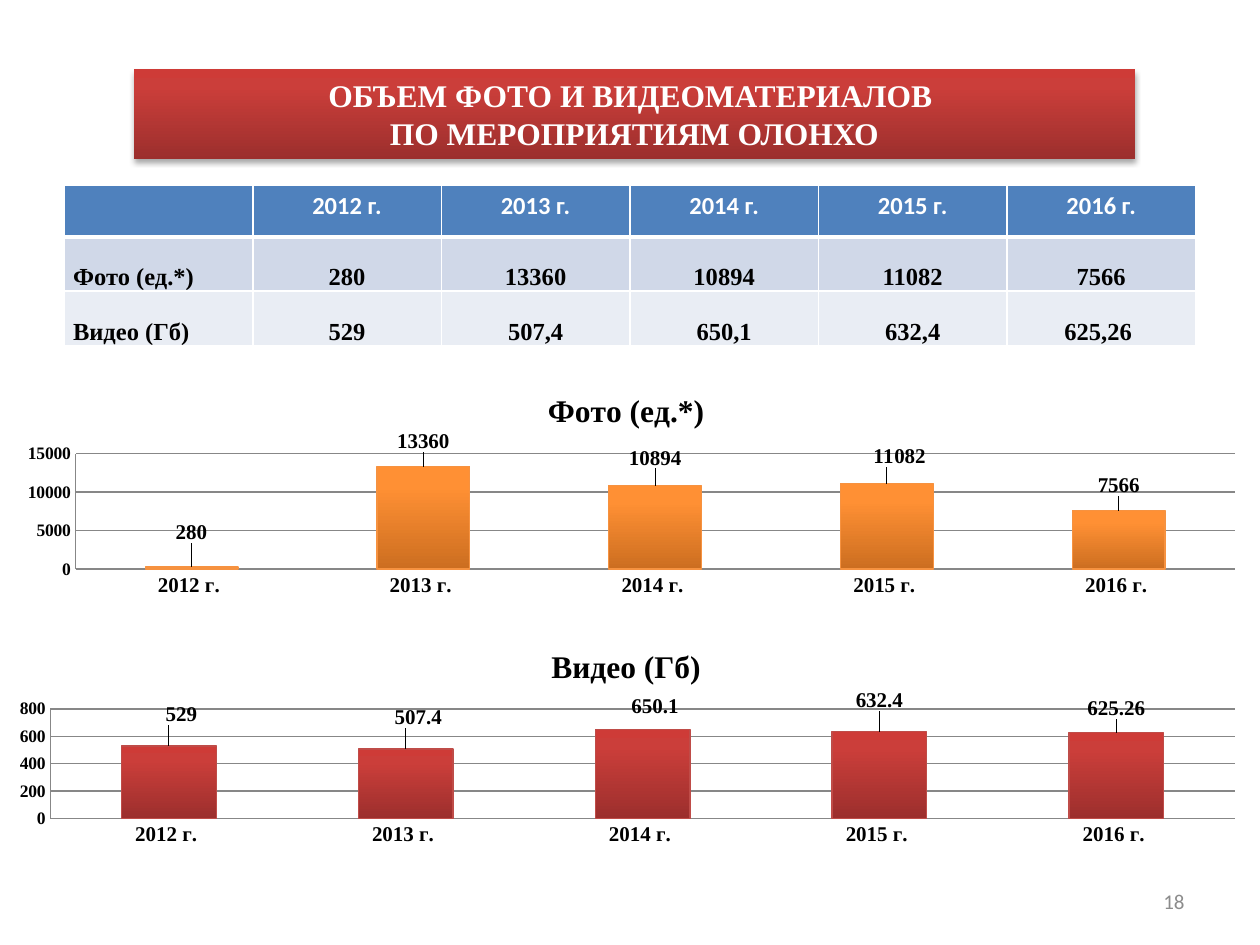
from copy import deepcopy
from dataclasses import dataclass

from lxml.etree import SubElement
from pptx import Presentation
from pptx.chart.data import CategoryChartData
from pptx.dml.color import RGBColor
from pptx.enum.chart import XL_CHART_TYPE, XL_LABEL_POSITION, XL_TICK_MARK
from pptx.enum.shapes import MSO_SHAPE
from pptx.enum.text import MSO_ANCHOR, PP_ALIGN
from pptx.oxml import parse_xml
from pptx.oxml.ns import nsdecls, qn
from pptx.util import Inches, Pt

SERIF, SANS = "Times New Roman", "Calibri"
WHITE, BLACK, GREY = "FFFFFF", "000000", "878787"
RED_STOPS = ("9C2F2D", "CB3E3A", "CE3B37")
ORANGE_STOPS = ("CC6E20", "FF9034", "FF9136")
YEARS = [f"{year} г." for year in range(2012, 2017)]
TABLE_ROWS = [
    ["", *YEARS],
    ["Фото (ед.*)", "280", "13360", "10894", "11082", "7566"],
    ["Видео (Гб)", "529", "507,4", "650,1", "632,4", "625,26 "],
]
ROW_FILLS = ("4F81BD", "D0D8E8", "E9EDF4")


@dataclass
class VolumeChart:
    """One yearly column chart with its plot area and label shifts."""

    title: str
    values: list[float]
    top: float
    height: float
    maximum: int
    step: int
    stops: tuple[str, str, str]
    outline: str
    plot: tuple[float, float, float, float]
    label_shifts: list[tuple[float, float]]


CHARTS = [
    VolumeChart("Фото (ед.*) ", [280, 13360, 10894, 11082, 7566], 2.97, 1.8, 15000, 5000,
                ORANGE_STOPS, "F69240", (0.06, 0.35, 0.92, 0.51),
                [(0, -0.08), (0, -0.04), (0, -0.05), (0.01, -0.05), (0, -0.04)]),
    VolumeChart("Видео (Гб) ", [529, 507.4, 650.1, 632.4, 625.26], 5, 1.74, 800, 200,
                RED_STOPS, "BF4C48", (0.04, 0.36, 0.94, 0.5),
                [(0.01, -0.07), (0.01, -0.07), (0.01, -0.03), (0, -0.07), (0, -0.04)]),
]


def rgb(color: str) -> RGBColor:
    """Turn a hex string into a colour."""
    return RGBColor.from_string(color)


def style_font(font, *, size, color=BLACK, name=SERIF, bold=True) -> None:
    """Set the face, size, weight and colour of a font."""
    font.name, font.size, font.bold = name, Pt(size), bold
    font.color.rgb = rgb(color)


def write(paragraph, text, *, align=PP_ALIGN.CENTER, **font_format) -> None:
    """Put one formatted run in a paragraph."""
    paragraph.alignment = align
    run = paragraph.add_run()
    run.text = text
    style_font(run.font, **font_format)


def fill_gradient(fill, element, colors) -> None:
    """Fill upwards with three colour stops."""
    fill.gradient()
    fill.gradient_angle = 90
    stop_list = element.find(f".//{qn('a:gsLst')}")
    stop_list.append(deepcopy(stop_list[-1]))
    for stop, color, position in zip(fill.gradient_stops, colors, (0, 0.8, 1)):
        stop.color.rgb = rgb(color)
        stop.position = position


def add_heading(slide) -> None:
    """Draw the red banner with the slide heading."""
    banner = slide.shapes.add_shape(MSO_SHAPE.RECTANGLE, Inches(1.06), Inches(0.55),
                                    Inches(7.95), Inches(0.71))
    fill_gradient(banner.fill, banner.element, RED_STOPS)
    banner.line.fill.background()
    banner.shadow.inherit = False
    effects = banner.element.spPr.find(qn("a:effectLst"))
    effects.append(parse_xml(
        f'<a:outerShdw {nsdecls("a")} blurRad="{Pt(3.1)}" dist="{Pt(1.8)}" dir="5400000" '
        'rotWithShape="0"><a:srgbClr val="000000"><a:alpha val="35000"/></a:srgbClr></a:outerShdw>'))
    frame = banner.text_frame
    frame.word_wrap = True
    write(frame.paragraphs[0], "ОБЪЕМ ФОТО И ВИДЕОМАТЕРИАЛОВ ", size=18, color=WHITE)
    write(frame.add_paragraph(), "ПО МЕРОПРИЯТИЯМ ОЛОНХО", size=18, color=WHITE)


def set_borders(cell, widths: dict[str, float]) -> None:
    """Give a cell white borders of the given widths."""
    properties = cell._tc.get_or_add_tcPr()
    for index, (side, width) in enumerate(widths.items()):
        properties.insert(index, parse_xml(
            f'<a:ln{side} {nsdecls("a")} w="{Pt(width)}"><a:solidFill>'
            f'<a:srgbClr val="{WHITE}"/></a:solidFill></a:ln{side}>'))


def add_volume_table(slide) -> None:
    """Draw the table of volumes by year."""
    table = slide.shapes.add_table(3, 6, Inches(0.51), Inches(1.47),
                                   Inches(8.98), Inches(1.23)).table
    for row_index, (texts, fill) in enumerate(zip(TABLE_ROWS, ROW_FILLS)):
        table.rows[row_index].height = Inches(0.41)
        for column, text in enumerate(texts):
            cell = table.cell(row_index, column)
            cell.fill.solid()
            cell.fill.fore_color.rgb = rgb(fill)
            set_borders(cell, {"L": 1, "R": 1, "T": 3 if row_index == 1 else 1,
                               "B": 3 if row_index == 0 else 1})
            paragraph = cell.text_frame.paragraphs[0]
            if row_index == 0:
                if text:
                    write(paragraph, text, size=14, color=WHITE, name=SANS)
                continue
            cell.margin_left = cell.margin_right = Inches(0.07)
            cell.margin_top = cell.margin_bottom = 0
            cell.vertical_anchor = MSO_ANCHOR.MIDDLE if column else MSO_ANCHOR.TOP
            paragraph.line_spacing = 2.0
            write(paragraph, text, size=14,
                  align=PP_ALIGN.CENTER if column else PP_ALIGN.LEFT)


def manual_layout(**settings):
    """Build a manual chart layout from its settings."""
    layout = parse_xml(f'<c:layout {nsdecls("c")}><c:manualLayout/></c:layout>')
    for tag, value in settings.items():
        SubElement(layout[0], qn(f"c:{tag}")).set("val", str(value))
    return layout


def add_volume_chart(slide, volume: VolumeChart) -> None:
    """Draw one column chart with shifted value labels."""
    data = CategoryChartData()
    data.categories = [f"{year} " for year in YEARS]
    data.add_series(volume.title, volume.values)
    chart = slide.shapes.add_chart(XL_CHART_TYPE.COLUMN_CLUSTERED, 0, Inches(volume.top),
                                   Inches(10), Inches(volume.height), data).chart
    style_font(chart.font, size=10, bold=False)
    chart.has_legend = False
    write(chart.chart_title.text_frame.paragraphs[0], volume.title, size=18)

    for axis, size in ((chart.category_axis, 12), (chart.value_axis, 10)):
        axis.major_tick_mark = axis.minor_tick_mark = XL_TICK_MARK.NONE
        style_font(axis.tick_labels.font, size=size)
        axis.format.line.color.rgb = rgb(GREY)
    value_axis = chart.value_axis
    value_axis.minimum_scale, value_axis.maximum_scale = 0, volume.maximum
    value_axis.major_unit = volume.step
    value_axis.major_gridlines.format.line.color.rgb = rgb(GREY)

    plot = chart.plots[0]
    plot.gap_width, plot.vary_by_categories = 150, False
    columns = plot.series[0]
    fill_gradient(columns.format.fill, columns._element, volume.stops)
    columns.format.line.color.rgb = rgb(volume.outline)
    columns.format.line.width = Pt(0.75)
    labels = columns.data_labels
    labels.show_value = True
    labels.position = XL_LABEL_POSITION.OUTSIDE_END
    style_font(labels.font, size=12)
    for index, (x, y) in enumerate(volume.label_shifts):
        label = columns.points[index].data_label
        style_font(label.font, size=12)
        label.position = XL_LABEL_POSITION.OUTSIDE_END
        label_element = labels._element.findall(qn("c:dLbl"))[index]
        label_element.insert(1, manual_layout(x=x, y=y))

    plot_area = plot._element.getparent()
    for old_layout in plot_area.findall(qn("c:layout")):
        plot_area.remove(old_layout)
    x, y, width, height = volume.plot
    plot_area.insert(0, manual_layout(layoutTarget="inner", xMode="edge", yMode="edge",
                                      x=x, y=y, w=width, h=height))


def add_page_number(slide) -> None:
    """Write the page number at the lower right."""
    frame = slide.shapes.add_textbox(Inches(7.17), Inches(6.95),
                                     Inches(2.33), Inches(0.4)).text_frame
    frame.word_wrap = True
    frame.vertical_anchor = MSO_ANCHOR.MIDDLE
    write(frame.paragraphs[0], "18", align=PP_ALIGN.RIGHT, size=12,
          color="8C8C8C", name=SANS, bold=False)


def main() -> None:
    """Build and save the slide."""
    presentation = Presentation()
    presentation.slide_width, presentation.slide_height = Inches(10), Inches(7.5)
    slide = presentation.slides.add_slide(presentation.slide_layouts[6])
    add_volume_table(slide)
    add_heading(slide)
    for volume in CHARTS:
        add_volume_chart(slide, volume)
    add_page_number(slide)
    presentation.save("out.pptx")


if __name__ == "__main__":
    main()
